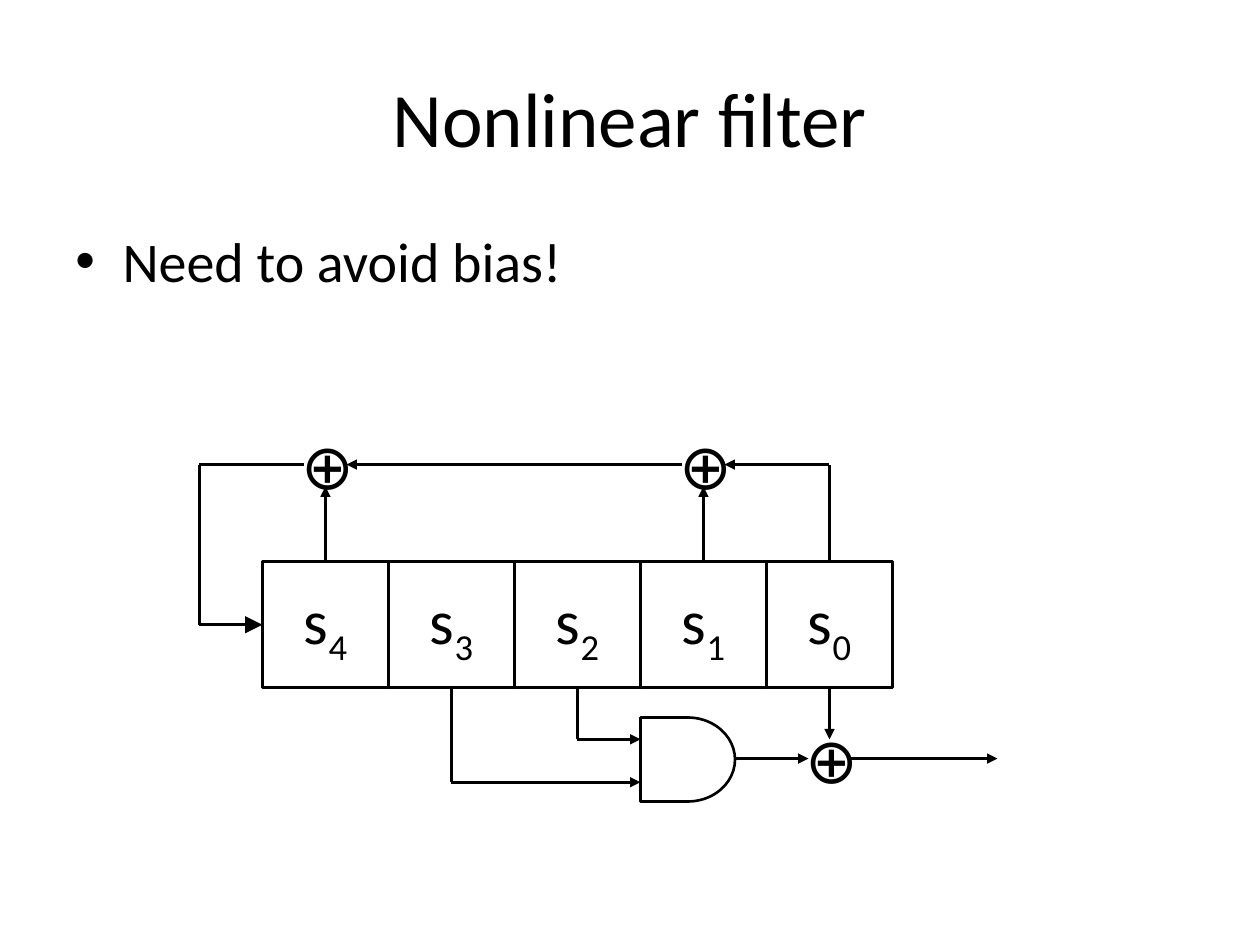
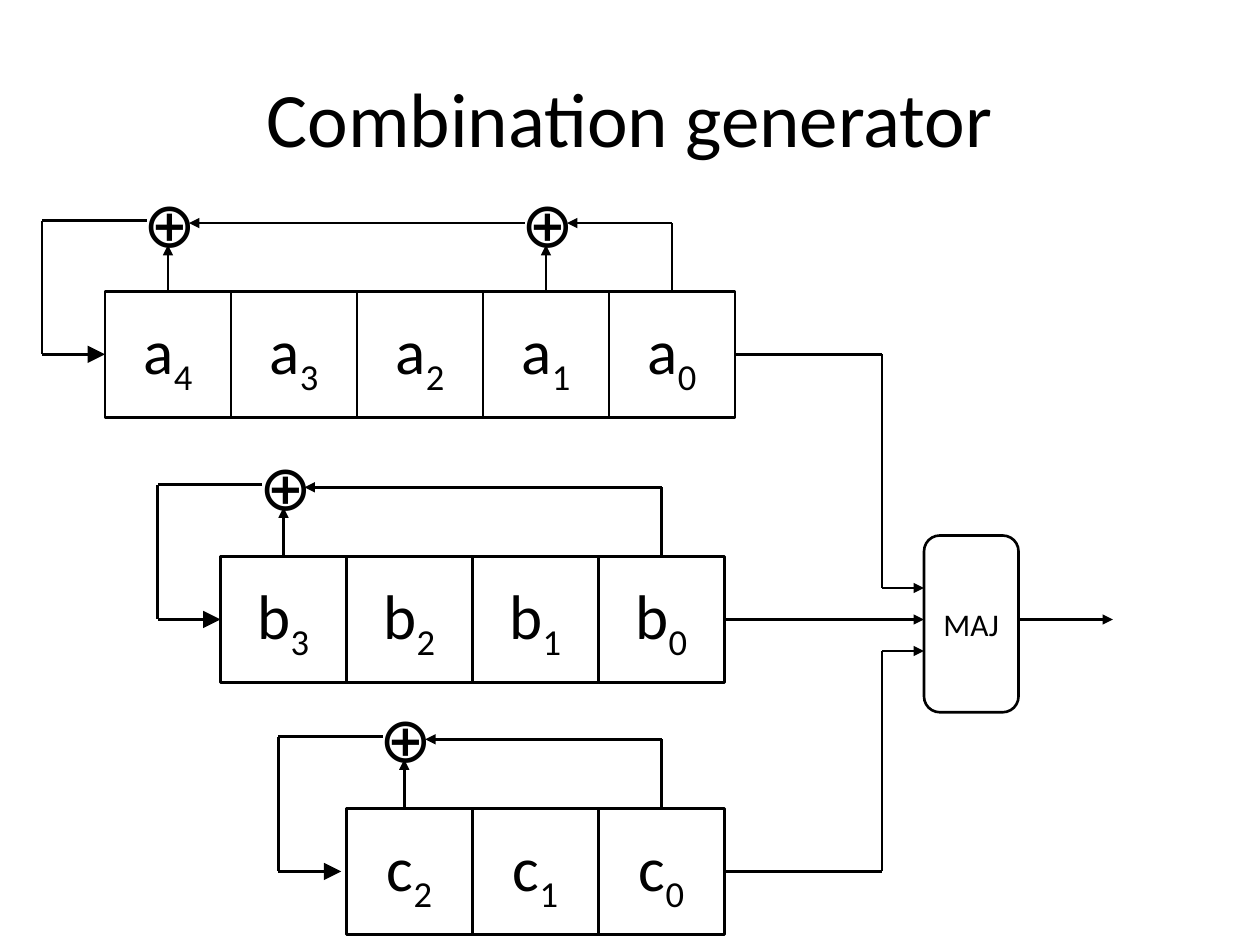
from collections import namedtuple
from dataclasses import dataclass
from itertools import pairwise

from lxml.etree import SubElement
from pptx import Presentation
from pptx.dml.color import RGBColor
from pptx.enum.shapes import MSO_CONNECTOR, MSO_SHAPE
from pptx.enum.text import MSO_ANCHOR, MSO_AUTO_SIZE, PP_ALIGN
from pptx.oxml.ns import qn
from pptx.util import Pt


@dataclass(frozen=True)
class Theme:
    font: str = "Calibri"
    ink: RGBColor = RGBColor(0, 0, 0)
    paper: RGBColor = RGBColor(255, 255, 255)
    title: int = 44
    body: int = 32
    symbol: int = 36
    label: int = 18
    stroke: float = 1.5


@dataclass(frozen=True)
class Register:
    name: str
    count: int
    left: float
    top: float
    taps: tuple  # cell positions, counted from the left
    xor_top: float
    feedback: float  # height of the line running back to the XORs
    loop: float  # height of the line leaving the leftmost XOR
    shift: float = 0  # sideways offset of the first tap and the loop


Joint = namedtuple("Joint", "shape site")

THEME = Theme()
TOP, LEFT, BOTTOM, RIGHT = range(4)
CELL = 72
XOR_REACH = 12
XOR_DROP = 38

FILTER_TITLE = "Nonlinear filter"
FILTER_BULLET = "Need to avoid bias!"
FILTER_REGISTER = Register("s", 5, 150, 321, (0, 3), 240, 265.5, 265.5)
GATE_BOX = (366, 410, 54, 48)
GATE_INPUTS = ((2, 422.5), (1, 447))  # cell position, input height
OUTPUT_XOR_TOP = 408
OUTPUT_Y = 433.5
OUTPUT_END = 570

GENERATOR_TITLE = "Combination generator"
GENERATOR_REGISTERS = (
    Register("a", 5, 60, 166.5, (0, 3), 102, 127.5, 126),
    Register("b", 4, 126, 318, (0,), 252, 278.5, 277),
    Register("c", 3, 198, 462, (0,), 396, 422.5, 421, shift=-3),
)
MAJORITY_BOX = (528, 306, 54, 101)
MAJORITY_INPUTS = (336, 354, 372)
MAJORITY_OUTPUT_END = 636
BUS_X = 504


def points(*lengths):
    return [Pt(length) for length in lengths]


def write(shape, text, size=THEME.body, subscript="", align=PP_ALIGN.LEFT,
          anchor=MSO_ANCHOR.TOP, wrap=True, bullet=None):
    frame = shape.text_frame
    frame.word_wrap = wrap
    frame.vertical_anchor = anchor
    if not wrap:
        frame.auto_size = MSO_AUTO_SIZE.SHAPE_TO_FIT_TEXT
    paragraph = frame.paragraphs[0]
    paragraph.alignment = align
    for part in filter(None, (text, subscript)):
        run = paragraph.add_run()
        run.text = part
        run.font.name = THEME.font
        run.font.size = Pt(size)
        run.font.color.rgb = THEME.ink
    if subscript:
        run.font._element.set("baseline", "-25000")
    if bullet:
        properties = paragraph._p.get_or_add_pPr()
        properties.set("marL", str(Pt(27)))
        properties.set("indent", str(-Pt(27)))
        SubElement(properties, qn("a:buFont"), typeface="Arial")
        SubElement(properties, qn("a:buChar"), char=bullet)


def add_box(slide, box, kind=MSO_SHAPE.RECTANGLE):
    shape = slide.shapes.add_shape(kind, *points(*box))
    shape.shadow.inherit = False
    shape.fill.background()
    shape.line.color.rgb = THEME.ink
    shape.line.width = Pt(THEME.stroke)
    return shape


def add_xor(slide, x, top):
    symbol = slide.shapes.add_textbox(*points(x - 21, top, 42.5, 51))
    write(symbol, "⊕", size=THEME.symbol, wrap=False)


def locate(end):
    """Return the (x, y) in points of a plain point or a Joint."""
    if not isinstance(end, Joint):
        return end
    shape = end.shape
    across, down = {TOP: (0.5, 0), LEFT: (0, 0.5), BOTTOM: (0.5, 1), RIGHT: (1, 0.5)}[end.site]
    return ((shape.left + shape.width * across) / Pt(1),
            (shape.top + shape.height * down) / Pt(1))


def route(slide, *stops, head="med"):
    """Draw straight connectors through the stops, with an arrowhead at the last."""
    for start, end in pairwise(stops):
        connector = slide.shapes.add_connector(
            MSO_CONNECTOR.STRAIGHT, *points(*locate(start), *locate(end)))
        connector.line.color.rgb = THEME.ink
        connector.line.width = Pt(THEME.stroke)
        if isinstance(start, Joint):
            connector.begin_connect(*start)
        if isinstance(end, Joint):
            connector.end_connect(*end)
        if end is stops[-1]:
            SubElement(connector.line._get_or_add_ln(), qn("a:tailEnd"),
                       type="triangle", w=head, len=head)
        SubElement(connector._element.spPr, qn("a:effectLst"))


def add_register(slide, register):
    """Draw the cells with their feedback loop and return the cells."""
    cells = []
    for position in range(register.count):
        cell = add_box(slide, (register.left + position * CELL, register.top, CELL, CELL))
        write(cell, register.name, subscript=str(register.count - 1 - position),
              size=THEME.symbol, align=PP_ALIGN.CENTER, anchor=MSO_ANCHOR.MIDDLE)
        cells.append(cell)

    source = Joint(cells[-1], TOP)
    stops = [source, (locate(source)[0], register.feedback)]
    for position in reversed(register.taps):
        shift = 0 if position else register.shift
        x = register.left + (position + 0.5) * CELL + shift
        add_xor(slide, x, register.xor_top)
        tap = (x, register.top) if shift else Joint(cells[position], TOP)
        route(slide, tap, (x, register.xor_top + XOR_DROP))
        route(slide, *stops, (x + XOR_REACH, register.feedback))
        stops = [(x - XOR_REACH, register.feedback)]

    loop_x = register.left - CELL / 2 + register.shift
    middle = register.top + CELL / 2
    entry = (register.left + register.shift, middle) if register.shift else Joint(cells[0], LEFT)
    route(slide, (x - XOR_REACH, register.loop), (loop_x, register.loop),
          (loop_x, middle), entry, head="lg")
    return cells


def add_slide(presentation, title):
    slide = presentation.slides.add_slide(presentation.slide_layouts[6])
    slide.background.fill.solid()
    slide.background.fill.fore_color.rgb = THEME.paper
    write(slide.shapes.add_textbox(*points(36, 21.6, 648, 90)), title, size=THEME.title,
          align=PP_ALIGN.CENTER, anchor=MSO_ANCHOR.MIDDLE)
    return slide


def build_filter(presentation):
    slide = add_slide(presentation, FILTER_TITLE)
    write(slide.shapes.add_textbox(*points(36, 126, 648, 81)), FILTER_BULLET, bullet="•")
    cells = add_register(slide, FILTER_REGISTER)
    gate = add_box(slide, GATE_BOX, MSO_SHAPE.FLOWCHART_DELAY)
    for position, y in GATE_INPUTS:
        source = Joint(cells[position], BOTTOM)
        route(slide, source, (locate(source)[0], y), (GATE_BOX[0], y))

    last = Joint(cells[-1], BOTTOM)
    x = locate(last)[0]
    add_xor(slide, x, OUTPUT_XOR_TOP)
    route(slide, last, (x, OUTPUT_XOR_TOP + 14.5))
    route(slide, (GATE_BOX[0] + GATE_BOX[2], OUTPUT_Y), (x - XOR_REACH, OUTPUT_Y))
    route(slide, (x + XOR_REACH, OUTPUT_Y), (OUTPUT_END, OUTPUT_Y))


def build_generator(presentation):
    slide = add_slide(presentation, GENERATOR_TITLE)
    left, _, width, _ = MAJORITY_BOX
    for register, y in zip(GENERATOR_REGISTERS, MAJORITY_INPUTS):
        output = Joint(add_register(slide, register)[-1], RIGHT)
        output_y = locate(output)[1]
        bends = [] if output_y == y else [(BUS_X, output_y), (BUS_X, y)]
        route(slide, output, *bends, (left, y))

    majority = add_box(slide, MAJORITY_BOX, MSO_SHAPE.FLOWCHART_ALTERNATE_PROCESS)
    write(majority, "MAJ", size=THEME.label, align=PP_ALIGN.CENTER, anchor=MSO_ANCHOR.MIDDLE)
    y = MAJORITY_INPUTS[1]
    route(slide, (left + width, y), (MAJORITY_OUTPUT_END, y))


def main():
    presentation = Presentation()
    presentation.slide_width, presentation.slide_height = points(720, 540)
    build_filter(presentation)
    build_generator(presentation)
    presentation.save("out.pptx")


if __name__ == "__main__":
    main()
